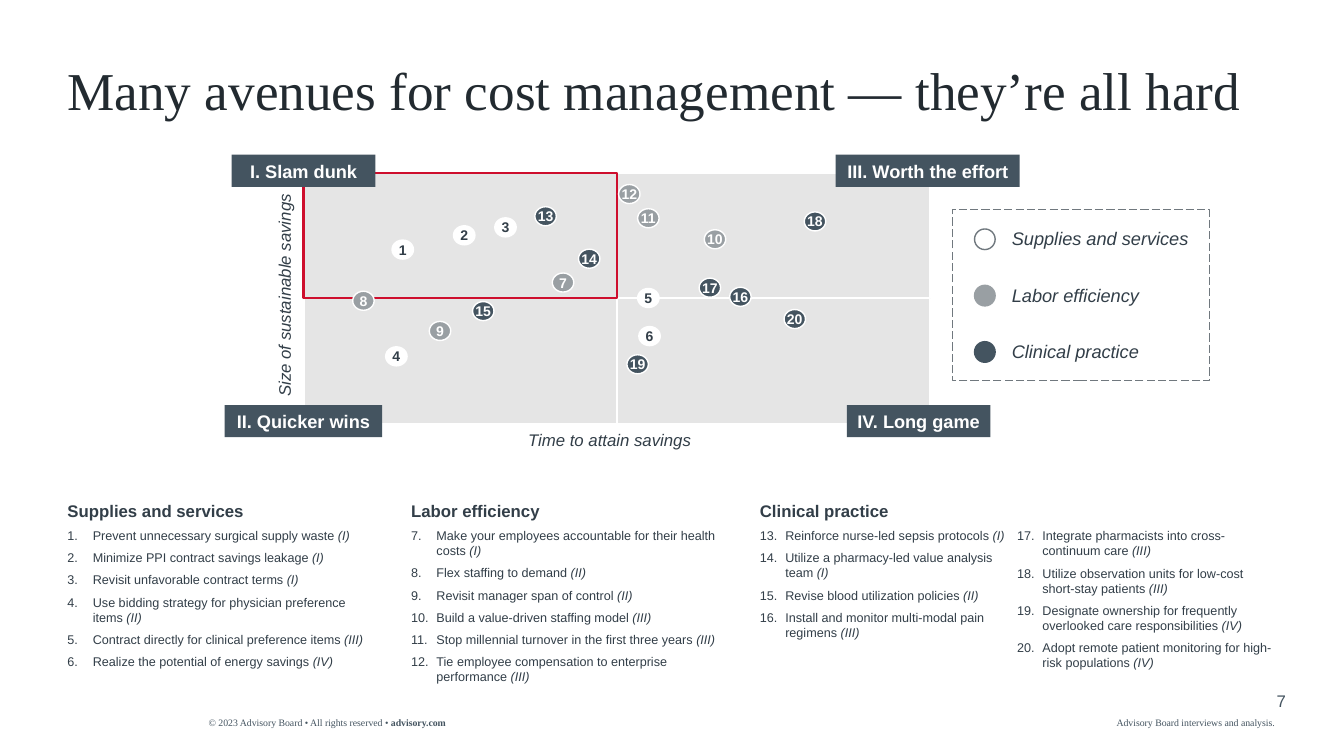
"""Build the cost management matrix slide with its numbered lists."""
from lxml.etree import SubElement
from pptx import Presentation
from pptx.dml.color import RGBColor
from pptx.enum.dml import MSO_LINE
from pptx.enum.shapes import MSO_SHAPE
from pptx.enum.text import MSO_ANCHOR, MSO_AUTO_SIZE, PP_ALIGN
from pptx.oxml.ns import qn
from pptx.util import Cm, Pt

COLORS = {
    "white": "FFFFFF",
    "panel": "E5E5E5",
    "red": "CE0E2D",
    "slate": "445460",
    "gray": "999FA3",
    "outline": "70787E",
    "text": "323E48",
    "title": "222A30",
}
SANS, SERIF = "Arial", "Times New Roman"
LEFT, CENTER, RIGHT = PP_ALIGN.LEFT, PP_ALIGN.CENTER, PP_ALIGN.RIGHT

prs = Presentation()
prs.slide_width, prs.slide_height = Cm(33.87), Cm(19.05)
s = prs.slides.add_slide(prs.slide_layouts[4])


def add_box(kind, x, y, w, h, fill=None, line=None, width=1):
    """Add a preset shape without shadow."""
    sp = s.shapes.add_shape(kind, Cm(x), Cm(y), Cm(w), Cm(h))
    sp.shadow.inherit = False
    if fill:
        sp.fill.solid()
        sp.fill.fore_color.rgb = RGBColor.from_string(COLORS[fill])
    else:
        sp.fill.background()
    if line:
        sp.line.color.rgb = RGBColor.from_string(COLORS[line])
        sp.line.width = Pt(width)
    else:
        sp.line.fill.background()
    return sp


def write(tf, text, size, color="text", font=SANS, bold=False, italic=False,
          align=LEFT, anchor=MSO_ANCHOR.TOP, wrap=True):
    """Append a run to the last paragraph of a frame without margins."""
    tf.margin_left = tf.margin_top = tf.margin_right = tf.margin_bottom = 0
    tf.auto_size = MSO_AUTO_SIZE.NONE
    tf.word_wrap = wrap
    tf.vertical_anchor = anchor
    p = tf.paragraphs[-1]
    p.alignment = align
    r = p.add_run()
    r.text = text
    r.font.name, r.font.size = font, Pt(size)
    r.font.bold, r.font.italic = bold, italic
    r.font.color.rgb = RGBColor.from_string(COLORS[color])
    return p


title = s.shapes.title
title.left, title.top, title.width, title.height = Cm(1.7), Cm(1.63), Cm(30.48), Cm(1.5)
p = write(title.text_frame, "Many avenues for cost management — they’re all hard",
          38, "title", SERIF)
p.line_spacing = 0.9

quad_w, quad_h = 7.9, 3.17
for row, col in ((1, 1), (1, 0), (0, 1), (0, 0)):
    add_box(MSO_SHAPE.RECTANGLE, 7.65 + col * quad_w, 4.35 + row * quad_h, quad_w, quad_h,
            "panel", "white" if row or col else "red", 1.5)

dots = [
    (10.15, 6.29), (11.7, 5.93), (12.74, 5.73), (9.99, 8.98), (16.34, 7.51),
    (16.37, 8.47), (14.19, 7.12), (9.16, 7.58), (11.09, 8.34), (18.02, 6.03),
    (16.34, 5.5), (15.86, 4.89), (13.75, 5.45), (14.85, 6.52), (12.18, 7.84),
    (18.66, 7.48), (17.89, 7.25), (20.54, 5.58), (16.07, 9.18), (20.03, 8.04),
]
dot_w, dot_h = 0.54, 0.48
for number, (x, y) in enumerate(dots, 1):
    fill = "white" if number < 7 else "gray" if number < 13 else "slate"
    sp = add_box(MSO_SHAPE.OVAL, x - dot_w / 2, y - dot_h / 2, dot_w, dot_h, fill, "white")
    write(sp.text_frame, str(number), 10, "text" if fill == "white" else "white",
          bold=True, align=CENTER, anchor=MSO_ANCHOR.MIDDLE, wrap=False)

for text, x, y, w in (
    ("I. Slam dunk", 5.84, 3.9, 3.62),
    ("II. Quicker wins", 5.66, 10.21, 3.97),
    ("III. Worth the effort", 21.06, 3.9, 4.64),
    ("IV. Long game", 21.34, 10.21, 3.62),
):
    sp = add_box(MSO_SHAPE.RECTANGLE, x, y, w, 0.81, "slate")
    write(sp.text_frame, text, 13, "white", bold=True, align=CENTER,
          anchor=MSO_ANCHOR.MIDDLE, wrap=False)

sp = add_box(MSO_SHAPE.RECTANGLE, 24, 5.28, 6.48, 4.32, line="outline", width=0.75)
sp.line.dash_style = MSO_LINE.LONG_DASH
for i, (text, fill, line) in enumerate((
    ("Supplies and services", "white", "outline"),
    ("Labor efficiency", "gray", "gray"),
    ("Clinical practice", "slate", "slate"),
)):
    y = 5.77 + i * 1.42
    add_box(MSO_SHAPE.OVAL, 24.56, y, 0.52, 0.52, fill, line)
    sp = s.shapes.add_textbox(Cm(25.5), Cm(y - 0.03), Cm(4.98), Cm(0.56))
    write(sp.text_frame, text, 13, italic=True)

for text, x, y, w, h, size, color, font, italic, align, angle in (
    ("Time to attain savings", 12.47, 10.82, 5.79, 0.51, 12, "text", SANS, True, CENTER, 0),
    ("Size of sustainable savings", 3.94, 7.19, 6.45, 0.51, 12, "text", SANS, True, CENTER, 270),
    ("Advisory Board interviews and analysis.", 28.14, 18.06, 4.24, 0.3, 7, "slate", SERIF,
     False, LEFT, 0),
    ("7", 30.91, 17.4, 1.5, 0.51, 12, "slate", SANS, False, RIGHT, 0),
):
    sp = s.shapes.add_textbox(Cm(x), Cm(y), Cm(w), Cm(h))
    sp.rotation = angle
    write(sp.text_frame, text, size, color, font, italic=italic, align=align)

sp = s.shapes.add_textbox(Cm(5.26), Cm(18.06), Cm(8.28), Cm(0.3))
write(sp.text_frame, "© 2023 Advisory Board • All rights reserved • ", 7, "slate", SERIF)
write(sp.text_frame, "advisory.com", 7, "slate", SERIF, bold=True)

lists = [
    (1, 1.7, 12.62, 7.54, 4.83, "Supplies and services", 1, [
        "Prevent unnecessary surgical supply waste (I)",
        "Minimize PPI contract savings leakage (I)",
        "Revisit unfavorable contract terms (I)",
        "Use bidding strategy for physician preference items (II)",
        "Contract directly for clinical preference items (III)",
        "Realize the potential of energy savings (IV)",
    ]),
    (2, 10.36, 12.62, 7.8, 5.23, "Labor efficiency", 7, [
        "Make your employees accountable for their health costs (I)",
        "Flex staffing to demand (II)",
        "Revisit manager span of control (II)",
        "Build a value-driven staffing model (III)",
        "Stop millennial turnover in the first three years (III)",
        "Tie employee compensation to enterprise performance (III)",
    ]),
    (3, 19.15, 12.62, 6.48, 4.09, "Clinical practice", 13, [
        "Reinforce nurse-led sepsis protocols (I)",
        "Utilize a pharmacy-led value analysis team (I)",
        "Revise blood utilization policies (II)",
        "Install and monitor multi-modal pain regimens (III)",
    ]),
    (4, 25.63, 13.31, 6.48, 3.61, None, 17, [
        "Integrate pharmacists into cross-continuum care (III)",
        "Utilize observation units for low-cost short-stay patients (III)",
        "Designate ownership for frequently overlooked care responsibilities (IV)",
        "Adopt remote patient monitoring for high-risk populations (IV)",
    ]),
]
for idx, x, y, w, h, heading, start, items in lists:
    sp = s.placeholders[idx]
    sp.left, sp.top, sp.width, sp.height = Cm(x), Cm(y), Cm(w), Cm(h)
    tf = sp.text_frame
    if heading:
        p = write(tf, heading, 12, bold=True)
        p.space_before = Pt(0)
        pPr = p._p.get_or_add_pPr()
        pPr.set("marL", "0")
        pPr.set("indent", "0")
        SubElement(pPr, qn("a:buNone"))
    for i, item in enumerate(items):
        first = i == 0 and not heading
        p = tf.paragraphs[0] if first else tf.add_paragraph()
        p.space_before = Pt(0 if first else 5)
        pPr = p._p.get_or_add_pPr()
        pPr.set("marL", str(Cm(0.64)))
        pPr.set("indent", str(-Cm(0.64)))
        SubElement(pPr, qn("a:buFont"), typeface=SANS)
        SubElement(pPr, qn("a:buAutoNum"), type="arabicPeriod", startAt=str(start))
        action, _, quadrant = item.rpartition("(")
        write(tf, action, 9)
        write(tf, "(" + quadrant, 9, italic=True)

prs.save("out.pptx")
